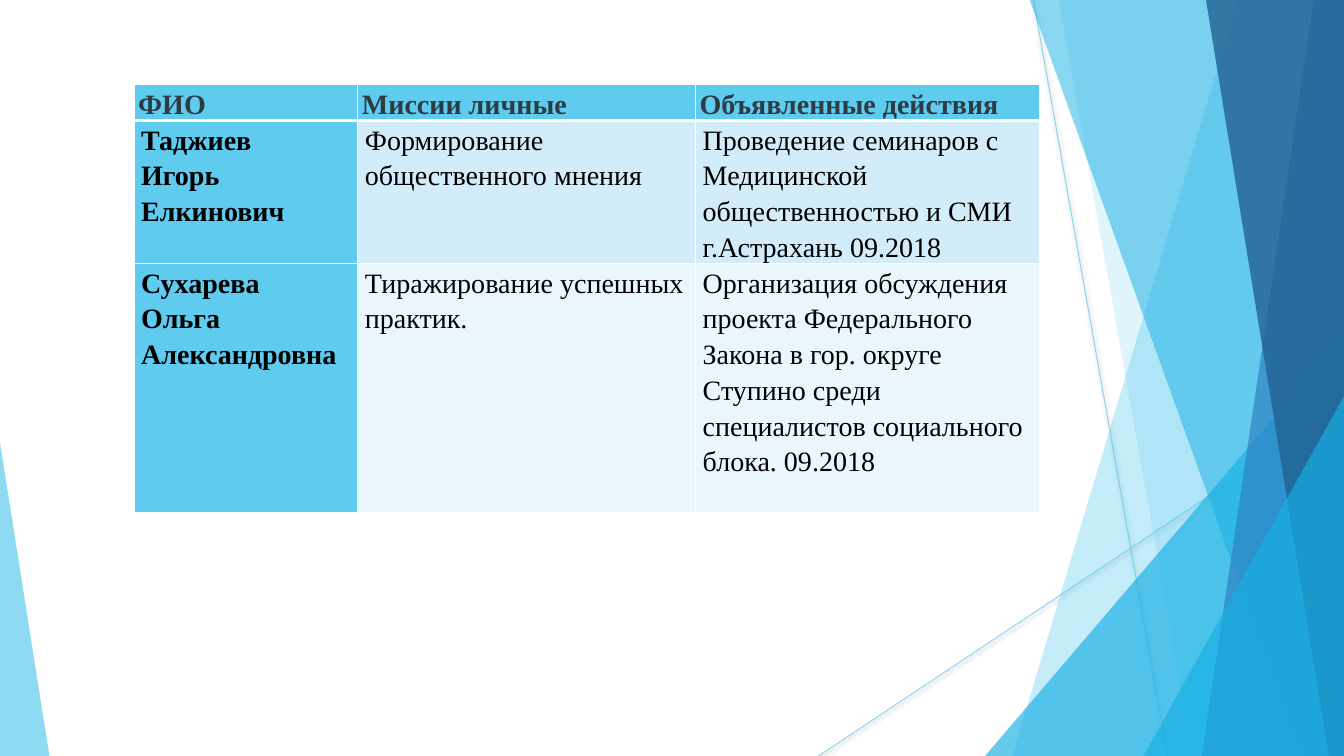
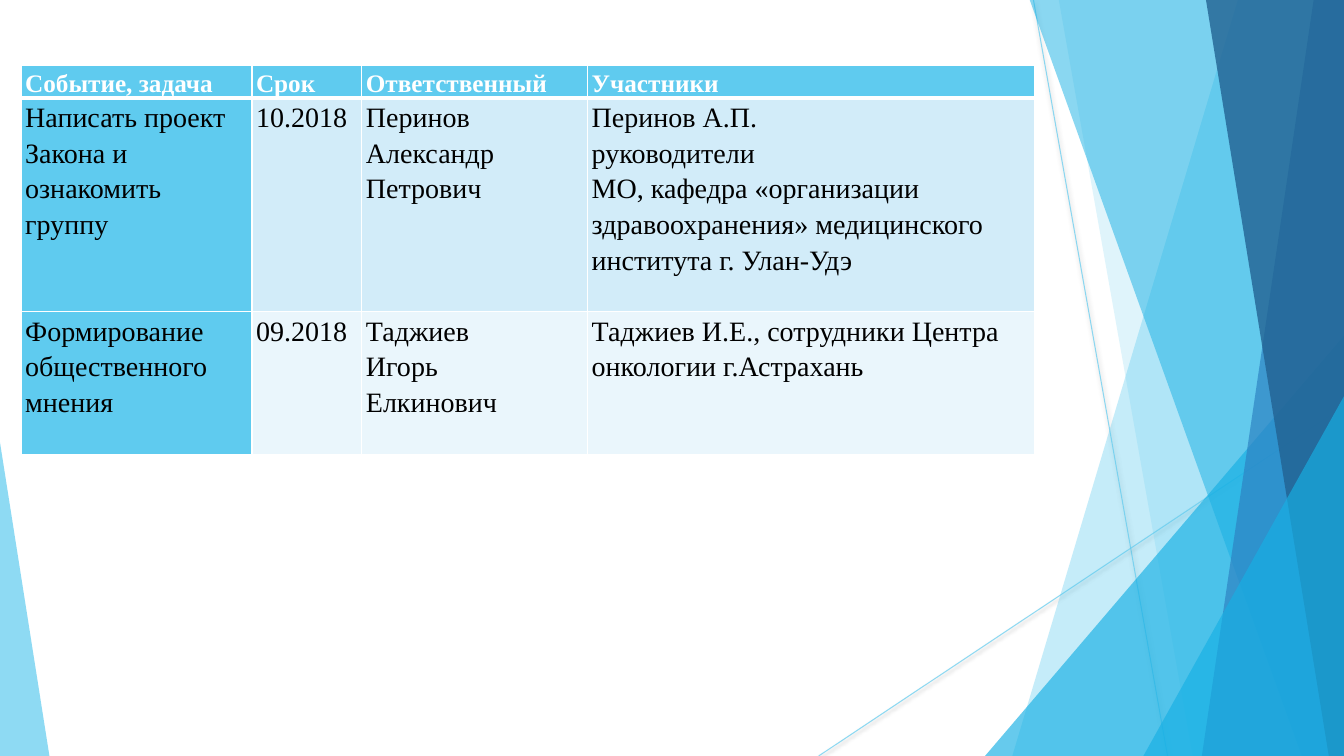
from lxml import etree
from pptx import Presentation
from pptx.dml.color import RGBColor
from pptx.enum.shapes import MSO_CONNECTOR, MSO_SHAPE
from pptx.oxml.ns import qn
from pptx.util import Inches, Pt

STRAIGHT = MSO_CONNECTOR.STRAIGHT
TRIANGLE = MSO_SHAPE.ISOSCELES_TRIANGLE

FONT = "Times New Roman"
SKY, AZURE, BLUE, NAVY = "5FCBEF", "17B0E4", "2E83C3", "226292"
WHITE, BLACK, SLATE = "FFFFFF", "000000", "2C3C43"
BANDS = ("D2ECF9", "EAF6FC")
WIDTH, HEIGHT, TOP = 13.33, 7.5, -0.01

# Backdrop: thin lines, then facets from back to front
LINES = [(10.25, 0, 11.58, HEIGHT), (WIDTH, 4.03, 8.12, HEIGHT)]
# ("facet", top-left x, bottom-left x, colour, opacity)
# ("triangle", left, top, width, apex position, colour, opacity)
FACETS = [
    ("facet", 12.28, 10.04, SKY, 36),
    ("facet", 10.5, 11.83, SKY, 20),
    ("triangle", 9.77, 3.33, 3.56, 1, AZURE, 66),
    ("facet", 10.21, 12.91, AZURE, 50),
    ("facet", 13.03, 11.92, BLUE, 70),
    ("facet", 11.96, 13.18, NAVY, 80),
    ("triangle", 11.34, 3.93, 1.99, 1, AZURE, 66),
    ("triangle", 0, 4.39, 0.49, 0, SKY, 70),
]

# Tables: a line break inside a cell starts a new paragraph
TABLES = [
    dict(
        at=(1.33, 0.84), cols=(2.22, 3.35, 3.41), rows=(0.35, 1.42, 2.47),
        head_size=20, head_color=SLATE, bold_names=True, inset=0.07,
        cells=[
            ("ФИО", "Миссии личные", "Объявленные действия"),
            ("Таджиев\nИгорь\nЕлкинович",
             "Формирование общественного мнения",
             "Проведение семинаров с Медицинской общественностью и СМИ "
             "г.Астрахань 09.2018"),
            ("Сухарева\nОльга Александровна",
             "Тиражирование успешных практик.",
             "Организация обсуждения проекта Федерального Закона в гор. округе "
             "Ступино среди специалистов социального блока. 09.2018"),
        ],
    ),
    dict(
        at=(0.21, 0.65), cols=(2.29, 1.09, 2.24, 4.43), rows=(0.32, 2.12, 1.42),
        head_size=18, head_color=WHITE, bold_names=False, inset=0.04,
        cells=[
            ("Событие, задача", "Срок", "Ответственный", "Участники"),
            ("Написать проект Закона и ознакомить группу", "10.2018",
             "Перинов Александр Петрович",
             "Перинов А.П.\nруководители\nМО, кафедра «организации "
             "здравоохранения» медицинского института г. Улан-Удэ"),
            ("Формирование общественного мнения", "09.2018",
             "Таджиев\nИгорь\nЕлкинович",
             "Таджиев И.Е., сотрудники Центра онкологии г.Астрахань"),
        ],
    ),
]


def rgb(color):
    return RGBColor.from_string(color)


def add_alpha(color_el, percent):
    etree.SubElement(color_el, qn("a:alpha")).set("val", str(percent * 1000))


def add_color(parent, color):
    el = etree.SubElement(parent, qn("a:srgbClr"))
    el.set("val", color)
    return el


def add_line(slide, x1, y1, x2, y2):
    line = slide.shapes.add_connector(STRAIGHT, *map(Inches, (x1, y1, x2, y2)))
    line.line.color.rgb = rgb(SKY)
    line.line.width = Pt(0.75)
    add_alpha(line.element.xpath(".//a:srgbClr")[0], 70)
    effects = etree.SubElement(line.element.spPr, qn("a:effectLst"))
    shadow = etree.SubElement(effects, qn("a:outerShdw"), blurRad=str(Pt(3.1)),
                              dist=str(Pt(1.6)), dir="5400000", rotWithShape="0")
    add_alpha(add_color(shadow, BLACK), 38)
    return line


def add_facet(slide, kind, *values):
    *geometry, color, opacity = values
    if kind == "triangle":
        left, top, width, apex = geometry
        sp = slide.shapes.add_shape(
            TRIANGLE, *map(Inches, (left, top, width, HEIGHT - top)))
        sp.adjustments[0] = apex
    else:
        top_x, bottom_x = geometry
        corners = [(top_x, TOP), (WIDTH, TOP), (WIDTH, HEIGHT), (bottom_x, HEIGHT)]
        points = [(Inches(x), Inches(y)) for x, y in corners]
        builder = slide.shapes.build_freeform(*points[0])
        builder.add_line_segments(points[1:], close=True)
        sp = builder.convert_to_shape()
    sp.shadow.inherit = False
    sp.line.fill.background()
    sp.fill.solid()
    sp.fill.fore_color.rgb = rgb(color)
    add_alpha(sp.element.spPr.xpath("./a:solidFill/a:srgbClr")[0], opacity)
    return sp


def add_backdrop(slide, layout):
    """Draw the backdrop and move it to the layout that all slides share."""
    parts = [add_line(slide, *ends) for ends in LINES]
    parts += [add_facet(slide, *facet) for facet in FACETS]
    for number, part in enumerate(parts, start=100):
        part.element.xpath(".//p:cNvPr")[0].set("id", str(number))
        layout.shapes.element.append(part.element)


def set_borders(cell, top, bottom):
    sides = (("L", 1), ("R", 1), ("T", top), ("B", bottom))
    for i, (side, width) in enumerate(sides):
        ln = etree.Element(qn("a:ln" + side), w=str(Pt(width)))
        add_color(etree.SubElement(ln, qn("a:solidFill")), WHITE)
        cell._tc.get_or_add_tcPr().insert(i, ln)


def fill_cell(cell, text, fill, inset, size, color, bold):
    cell.fill.solid()
    cell.fill.fore_color.rgb = rgb(fill)
    cell.margin_left = cell.margin_right = Inches(inset)
    cell.margin_top = cell.margin_bottom = 0
    tf = cell.text_frame
    for i, line in enumerate(text.split("\n")):
        p = tf.add_paragraph() if i else tf.paragraphs[0]
        p.line_spacing = 1.15
        r = p.add_run()
        r.text = line
        r.font.name = FONT
        r.font.size = Pt(size)
        r.font.bold = bold
        r.font.color.rgb = rgb(color)


def add_table(slide, data):
    cols, rows = data["cols"], data["rows"]
    box = (*data["at"], sum(cols), sum(rows))
    table = slide.shapes.add_table(len(rows), len(cols), *map(Inches, box)).table
    table.horz_banding = False
    for column, width in zip(table.columns, cols):
        column.width = Inches(width)
    for row, height in zip(table.rows, rows):
        row.height = Inches(height)
    for i, texts in enumerate(data["cells"]):
        for j, text in enumerate(texts):
            cell = table.cell(i, j)
            if i == 0:
                fill_cell(cell, text, SKY, 0.04, data["head_size"],
                          data["head_color"], True)
            else:
                fill = BANDS[(i - 1) % 2] if j else SKY
                fill_cell(cell, text, fill, data["inset"], 20, BLACK,
                          data["bold_names"] and j == 0)
            set_borders(cell, top=3 if i == 1 else 1, bottom=3 if i == 0 else 1)


def main():
    prs = Presentation()
    prs.slide_width, prs.slide_height = Inches(WIDTH), Inches(HEIGHT)
    layout = prs.slide_layouts.get_by_name("Blank")
    slides = [prs.slides.add_slide(layout) for _ in TABLES]
    add_backdrop(slides[0], layout)
    for slide, data in zip(slides, TABLES):
        add_table(slide, data)
    prs.save("out.pptx")


if __name__ == "__main__":
    main()
